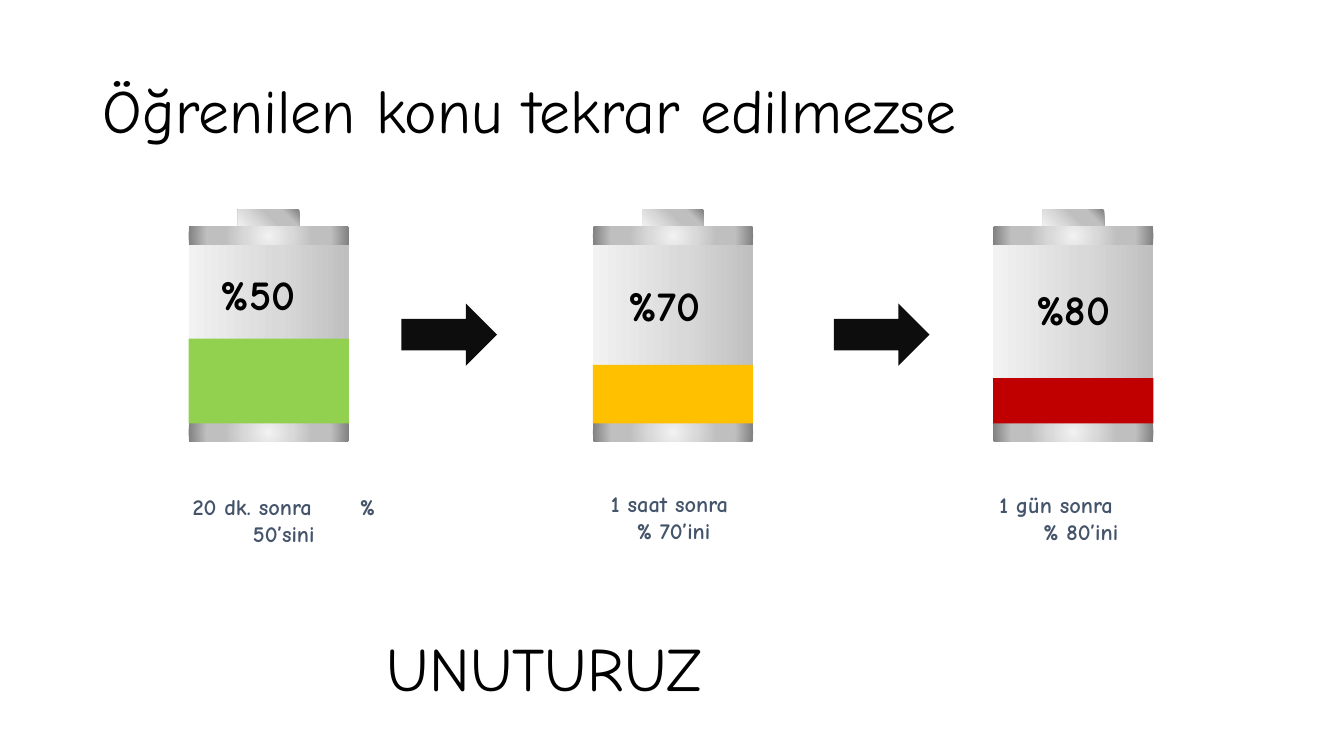
from dataclasses import dataclass

import pptx
import pptx.dml.color
import pptx.enum.shapes
import pptx.enum.text
import pptx.oxml
import pptx.oxml.ns
import pptx.util

EMU_PER_PX = 9144
SHAPES = pptx.enum.shapes.MSO_SHAPE
ALIGN = pptx.enum.text.PP_ALIGN
INSET = 10


@dataclass(frozen=True)
class Theme:
    font: str = "Comic Neue"
    ink: str = "000000"
    caption: str = "44546A"
    arrow: str = "0D0D0D"
    green: str = "92D050"
    amber: str = "FFC000"
    red: str = "C00000"
    casing: tuple = ((0, "F2F2F2"), (57, "D9D9D9"), (100, "BFBFBF"))
    metal: tuple = ((0, "F2F2F2"), (29, "D9D9D9"), (55, "BFBFBF"),
                    (77, "BFBFBF"), (100, "808080"))
    heading_size: int = 44
    percent_size: int = 30
    caption_size: int = 16


THEME = Theme()
LINEAR = '<a:lin ang="0" scaled="0"/>'
RADIAL = '<a:path path="circle"><a:fillToRect l="{}" t="{}" r="{}" b="{}"/></a:path>'
FROM_CENTRE = RADIAL.format(50000, 50000, 50000, 50000)
FROM_BOTTOM_LEFT = RADIAL.format(0, 100000, 100000, 0)


def px(length):
    return pptx.util.Emu(length * EMU_PER_PX)


def rgb(colour):
    return pptx.dml.color.RGBColor.from_string(colour)


def add_block(shapes, kind, box, colour=None):
    shape = shapes.add_shape(kind, *map(px, box))
    shape.shadow.inherit = False
    shape.line.fill.background()
    if colour:
        shape.fill.solid()
        shape.fill.fore_color.rgb = rgb(colour)
    return shape


def add_gradient_block(shapes, box, stops, direction):
    shape = add_block(shapes, SHAPES.RECTANGLE, box)
    stop_list = "".join(
        f'<a:gs pos="{position * 1000}"><a:srgbClr val="{colour}"/></a:gs>'
        for position, colour in stops)
    gradient = pptx.oxml.parse_xml(
        f'<a:gradFill {pptx.oxml.ns.nsdecls("a")} rotWithShape="1">'
        f"<a:gsLst>{stop_list}</a:gsLst>{direction}</a:gradFill>")
    geometry = shape._element.spPr.find(pptx.oxml.ns.qn("a:prstGeom"))
    geometry.addnext(gradient)


def format_text(text_frame, size, colour, bold=False, align=ALIGN.LEFT):
    for paragraph in text_frame.paragraphs:
        paragraph.alignment = align
        for run in paragraph.runs:
            run.font.name = THEME.font
            run.font.size = pptx.util.Pt(size)
            run.font.bold = bold
            run.font.color.rgb = rgb(colour)


def add_text(slide, box, text, size, colour, bold=False, align=ALIGN.LEFT):
    text_frame = slide.shapes.add_textbox(*map(px, box)).text_frame
    text_frame.word_wrap = True
    text_frame.auto_size = pptx.enum.text.MSO_AUTO_SIZE.SHAPE_TO_FIT_TEXT
    text_frame.text = text
    format_text(text_frame, size, colour, bold, align)
    return text_frame


def add_title(slide, box, text):
    title = slide.shapes.title
    title.left, title.top, title.width, title.height = map(px, box)
    text_frame = title.text_frame
    text_frame.text = text
    text_frame.vertical_anchor = pptx.enum.text.MSO_ANCHOR.MIDDLE
    text_frame.paragraphs[0].line_spacing = 0.9
    format_text(text_frame, THEME.heading_size, THEME.ink)


def add_battery(slide, box, level_height, level_colour):
    left, top, width, height = box
    terminal_width, terminal_height, rim = 61, 17, 18
    body_top, bottom = top + terminal_height, top + height
    shapes = slide.shapes.add_group_shape().shapes
    add_gradient_block(shapes, (left, body_top, width, height - terminal_height),
                       THEME.casing, LINEAR)
    add_gradient_block(shapes, (left + (width - terminal_width) // 2, top,
                                terminal_width, terminal_height),
                       THEME.metal, FROM_BOTTOM_LEFT)
    for rim_top in (body_top, bottom - rim):
        add_gradient_block(shapes, (left, rim_top, width, rim), THEME.metal, FROM_CENTRE)
    add_block(slide.shapes, SHAPES.RECTANGLE,
              (left, bottom - rim - level_height, width, level_height), level_colour)


def add_caption(slide, box, text, tab=0, hanging=0):
    """Centre a caption; tab sets a gap, hanging moves the first line left."""
    text_frame = add_text(slide, box, text, THEME.caption_size, THEME.caption,
                          True, ALIGN.CENTER)
    text_frame.margin_right = px(INSET + hanging)
    properties = text_frame.paragraphs[0]._p.get_or_add_pPr()
    if hanging:
        properties.set("marL", str(px(hanging)))
        properties.set("indent", str(px(-hanging)))
    if tab:
        properties.append(pptx.oxml.parse_xml(
            f'<a:tabLst {pptx.oxml.ns.nsdecls("a")}>'
            f'<a:tab pos="{px(tab)}" algn="l"/></a:tabLst>'))


def add_forgetting_slide(presentation):
    slide = presentation.slides.add_slide(presentation.slide_layouts[5])
    add_title(slide, (92, 40, 1150, 145), "Öğrenilen konu tekrar edilmezse")

    batteries = (
        (187, 84, THEME.green, "%50", (209, 261, 125, 61)),
        (588, 58, THEME.amber, "%70", (614, 272, 106, 61)),
        (985, 45, THEME.red, "%80", (1018, 276, 106, 61)),
    )
    for left, level_height, colour, percent, percent_box in batteries:
        add_battery(slide, (left, 208, 159, 230), level_height, colour)
        add_text(slide, percent_box, percent, THEME.percent_size, THEME.ink, True)

    for left in (398, 827):
        add_block(slide.shapes, SHAPES.RIGHT_ARROW, (left, 301, 95, 62), THEME.arrow)

    add_caption(slide, (165, 484, 233, 64), "20 dk. sonra\t% 50’sini", tab=166)
    add_caption(slide, (567, 481, 202, 64), "1 saat sonra \n% 70’ini")
    add_caption(slide, (971, 482, 202, 64), "1 gün sonra\v% 80’ini", hanging=49)
    add_text(slide, (312, 620, 457, 84), "UNUTURUZ", THEME.heading_size, THEME.ink,
             align=ALIGN.CENTER)


def main():
    presentation = pptx.Presentation()
    presentation.slide_width, presentation.slide_height = px(1333), px(750)
    add_forgetting_slide(presentation)
    presentation.save("out.pptx")


if __name__ == "__main__":
    main()
